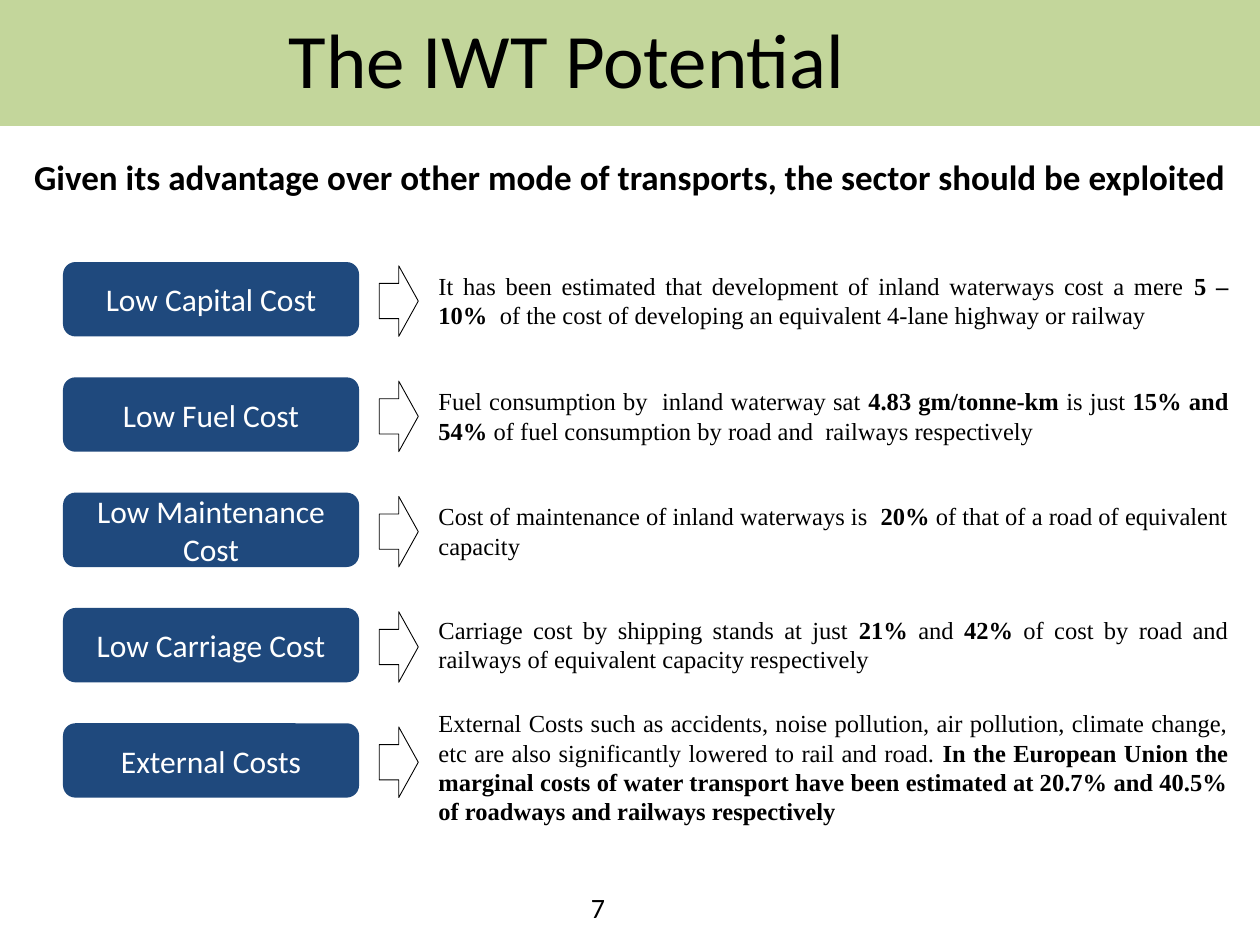
from dataclasses import dataclass

from pptx import Presentation
from pptx.dml.color import RGBColor
from pptx.enum.shapes import MSO_SHAPE
from pptx.enum.text import MSO_ANCHOR, MSO_AUTO_SIZE, PP_ALIGN
from pptx.shapes.autoshape import Shape
from pptx.slide import Slide
from pptx.util import Inches, Pt

GREEN = RGBColor(0xC3, 0xD6, 0x9B)
NAVY = RGBColor(0x1F, 0x49, 0x7D)
WHITE = RGBColor(0xFF, 0xFF, 0xFF)
BLACK = RGBColor(0x00, 0x00, 0x00)

# The slide is a grid of 100 columns by 75 rows
SLIDE_WIDTH, SLIDE_HEIGHT = Inches(10), Inches(7.5)
COLUMN, ROW = SLIDE_WIDTH / 100, SLIDE_HEIGHT / 75
FIRST_TOP, PITCH = 20.8, 9.15

HEADING = {"name": "Calibri", "size": Pt(44), "color": BLACK}
SUBHEADING = {"name": "Calibri", "size": Pt(20), "bold": True, "color": BLACK}
LABEL = {"name": "Calibri", "size": Pt(18), "color": WHITE}
PAGE_NUMBER = {"name": "Calibri", "size": Pt(16), "color": BLACK}
BODY = {"name": "Times New Roman", "size": Pt(14), "color": BLACK}


@dataclass(frozen=True)
class Area:
    """A rectangle in grid columns and rows."""
    left: float
    top: float
    width: float
    height: float

    def lengths(self) -> tuple[int, int, int, int]:
        return (round(self.left * COLUMN), round(self.top * ROW),
                round(self.width * COLUMN), round(self.height * ROW))


@dataclass(frozen=True)
class Advantage:
    """A label with its description, whose runs alternate plain and bold."""
    label: str
    description: tuple[str, ...]
    alignment: PP_ALIGN = PP_ALIGN.JUSTIFY
    text_offset: float = 0.7
    text_height: float = 4.7


ADVANTAGES = (
    Advantage("Low Capital Cost", (
        "It has been estimated that development of inland waterways cost a mere ",
        "5 – 10%  ",
        "of the cost of developing an equivalent 4-lane highway or railway")),
    Advantage("Low Fuel Cost", (
        "Fuel consumption by  inland waterway sat ", "4.83 gm/tonne-km ",
        "is just ", "15% and 54% ",
        "of fuel consumption by road and  railways respectively")),
    Advantage("Low Maintenance Cost", (
        "Cost of maintenance of inland waterways is  ", "20% ",
        "of that of a road of equivalent capacity"), PP_ALIGN.LEFT),
    Advantage("Low Carriage Cost", (
        "Carriage cost by shipping stands at just ", "21% ", "and ", "42%",
        " of cost by road and railways of equivalent capacity respectively"),
        text_offset=0.55),
    Advantage("External Costs", (
        "External Costs such as accidents, noise pollution, air pollution, climate "
        "change, etc are also significantly lowered to rail and road. ",
        "In the European Union the marginal costs of water transport have been "
        "estimated at 20.7% and 40.5% of roadways and railways respectively"),
        text_offset=-1.2, text_height=9.4),
)


def add_run(paragraph, text: str, style: dict) -> None:
    run = paragraph.add_run()
    run.text = text
    for name, value in style.items():
        if name == "color":
            run.font.color.rgb = value
        else:
            setattr(run.font, name, value)


def write_centred(shape: Shape, text: str, style: dict) -> None:
    frame = shape.text_frame
    frame.word_wrap = True
    frame.vertical_anchor = MSO_ANCHOR.MIDDLE
    paragraph = frame.paragraphs[0]
    paragraph.alignment = PP_ALIGN.CENTER
    add_run(paragraph, text, style)


def add_text(slide: Slide, area: Area, text: str, style: dict) -> None:
    write_centred(slide.shapes.add_textbox(*area.lengths()), text, style)


def add_filled_shape(slide: Slide, kind: MSO_SHAPE, area: Area, fill: RGBColor) -> Shape:
    shape = slide.shapes.add_shape(kind, *area.lengths())
    shape.shadow.inherit = False
    shape.fill.solid()
    shape.fill.fore_color.rgb = fill
    shape.line.fill.background()
    return shape


def add_description(slide: Slide, advantage: Advantage, top: float) -> None:
    area = Area(34.8, top + advantage.text_offset, 62.7, advantage.text_height)
    frame = slide.shapes.add_textbox(*area.lengths()).text_frame
    settings = {"margin_left": 0, "margin_top": 0, "margin_right": 0, "margin_bottom": 0,
                "word_wrap": True, "auto_size": MSO_AUTO_SIZE.SHAPE_TO_FIT_TEXT}
    for name, value in settings.items():
        setattr(frame, name, value)
    paragraph = frame.paragraphs[0]
    paragraph.alignment = advantage.alignment
    for index, text in enumerate(advantage.description):
        add_run(paragraph, text, BODY | {"bold": index % 2 == 1})


def add_advantage(slide: Slide, advantage: Advantage, top: float) -> None:
    button = add_filled_shape(slide, MSO_SHAPE.ROUNDED_RECTANGLE,
                              Area(5, top, 23.5, 5.9), NAVY)
    write_centred(button, advantage.label, LABEL)
    arrow = add_filled_shape(slide, MSO_SHAPE.RIGHT_ARROW,
                             Area(30.1, top + 0.3, 3.1, 5.6), WHITE)
    arrow.line.color.rgb = BLACK
    arrow.line.width = Pt(0.5)
    add_description(slide, advantage, top)


def main() -> None:
    presentation = Presentation()
    presentation.slide_width, presentation.slide_height = SLIDE_WIDTH, SLIDE_HEIGHT
    slide = presentation.slides.add_slide(presentation.slide_layouts[6])

    add_filled_shape(slide, MSO_SHAPE.RECTANGLE, Area(0, 0, 100, 10), GREEN)
    add_text(slide, Area(5, 0, 80, 9.2), "The IWT Potential", HEADING)
    add_text(slide, Area(0.8, 11.5, 98.4, 5),
             "Given its advantage over other mode of transports, "
             "the sector should be exploited", SUBHEADING)
    for index, advantage in enumerate(ADVANTAGES):
        add_advantage(slide, advantage, FIRST_TOP + index * PITCH)
    add_text(slide, Area(35.8, 70, 23.3, 4), "7", PAGE_NUMBER)

    presentation.save("out.pptx")


if __name__ == "__main__":
    main()
